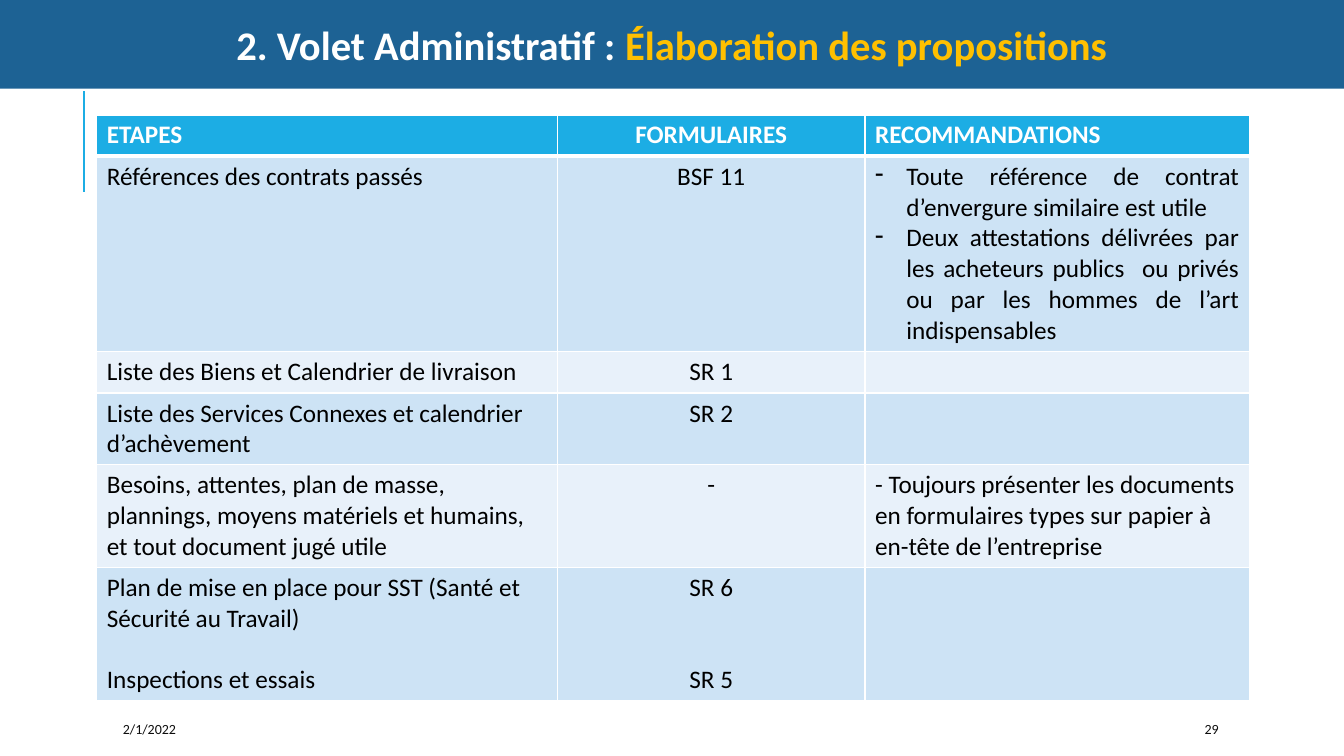
from lxml import etree
from pptx import Presentation
from pptx import util as u
from pptx.dml.color import RGBColor
from pptx.enum import shapes, text
from pptx.oxml import ns

WHITE, BLACK, GOLD = "FFFFFF", "000000", "FFC000"
NAVY, CYAN, FOOTER_INK = "1D6294", "1CADE4", "0D0D0D"
BANDS = ["CDE3F5", "E8F1FA"]
LEFT, CENTER, JUSTIFY = text.PP_ALIGN.LEFT, text.PP_ALIGN.CENTER, text.PP_ALIGN.JUSTIFY

COLUMN_WIDTHS = [4.57, 3.05, 3.81]
ROW_HEIGHTS = [0.41, 1.94, 0.41, 0.71, 1.02, 1.32]
LINE_HEIGHT = 22
HEADINGS = ["ETAPES", "FORMULAIRES", "RECOMMANDATIONS"]
STEPS = [
    (["Références des contrats passés"], ["BSF 11"],
     ["Toute référence de contrat d’envergure similaire est utile",
      "Deux attestations délivrées par les acheteurs publics  ou privés "
      "ou par les hommes de l’art indispensables"]),
    (["Liste des Biens et Calendrier de livraison"], ["SR 1"], []),
    (["Liste des Services Connexes et calendrier d’achèvement"], ["SR 2"], []),
    (["Besoins, attentes, plan de masse, plannings, moyens matériels et humains, "
      "et tout document jugé utile"], ["-"],
     ["- Toujours présenter les documents en formulaires types sur papier à "
      "en-tête de l’entreprise"]),
    (["Plan de mise en place pour SST (Santé et Sécurité au Travail)",
      "Inspections et essais"], ["SR 6", "SR 5"], []),
]


def color(value):
    return RGBColor.from_string(value)


def set_font(font, size, ink, bold=False):
    font.name, font.size, font.bold = "Calibri", u.Pt(size), bold
    font.color.rgb = color(ink)


def add_banner(slide, left, top, width, height):
    banner = slide.shapes.add_shape(
        shapes.MSO_SHAPE.RECTANGLE, *map(u.Inches, (left, top, width, height)))
    banner.shadow.inherit = False
    banner.fill.solid()
    banner.fill.fore_color.rgb = color(NAVY)
    banner.line.fill.background()
    frame = banner.text_frame
    frame.word_wrap = True
    frame.vertical_anchor = text.MSO_ANCHOR.MIDDLE
    title = frame.paragraphs[0]
    title.alignment = CENTER
    for words, ink in (("2. Volet Administratif : ", WHITE),
                       ("Élaboration des propositions", GOLD)):
        part = title.add_run()
        part.text = words
        set_font(part.font, 29, ink, True)


def add_accent(slide, left, top, height):
    accent = slide.shapes.add_connector(
        shapes.MSO_CONNECTOR.STRAIGHT,
        *map(u.Inches, (left, top + height, left, top)))
    accent.line.color.rgb = color(CYAN)
    accent.line.width = u.Pt(1.5)
    etree.SubElement(accent._element.spPr, ns.qn("a:effectLst"))


def add_footer(slide, words, left, top, width, height):
    box = slide.shapes.add_textbox(*map(u.Inches, (left, top, width, height)))
    frame = box.text_frame
    frame.word_wrap = True
    frame.vertical_anchor = text.MSO_ANCHOR.MIDDLE
    frame.text = words
    set_font(frame.paragraphs[0].font, 10, FOOTER_INK)


def add_borders(cell, top, bottom):
    properties = cell._tc.get_or_add_tcPr()
    for side, points in (("L", 1), ("R", 1), ("T", top), ("B", bottom)):
        edge = etree.SubElement(properties, ns.qn(f"a:ln{side}"), w=str(u.Pt(points)))
        fill = etree.SubElement(edge, ns.qn("a:solidFill"))
        etree.SubElement(fill, ns.qn("a:srgbClr"), val=WHITE)


def add_dash(paragraph):
    properties = paragraph._p.get_or_add_pPr()
    indent = u.Inches(0.31)
    properties.set("marL", str(indent))
    properties.set("indent", str(-indent))
    etree.SubElement(properties, ns.qn("a:buChar"), char="-")


def fill_cell(cell, lines, fill, ink, bold, alignment, gap):
    cell.fill.solid()
    cell.fill.fore_color.rgb = color(fill)
    frame = cell.text_frame
    frame.text = "\n".join(lines)
    for index, paragraph in enumerate(frame.paragraphs):
        paragraph.alignment = alignment
        set_font(paragraph.font, 18, ink, bold)
        if index and gap:
            paragraph.space_before = u.Pt(gap)
        if alignment == JUSTIFY:
            add_dash(paragraph)


def add_steps_table(slide, left, top):
    rows = [[[heading] for heading in HEADINGS], *STEPS]
    table = slide.shapes.add_table(
        len(rows), len(HEADINGS), u.Inches(left), u.Inches(top),
        u.Inches(sum(COLUMN_WIDTHS)), u.Inches(sum(ROW_HEIGHTS))).table
    for column, width in zip(table.columns, COLUMN_WIDTHS):
        column.width = u.Inches(width)
    for r, (row, height) in enumerate(zip(rows, ROW_HEIGHTS)):
        table.rows[r].height = u.Inches(height)
        header = r == 0
        fill, ink = (CYAN, WHITE) if header else (BANDS[(r - 1) % 2], BLACK)
        for c, lines in enumerate(row):
            cell = table.cell(r, c)
            add_borders(cell, 3 if r == 1 else 1, 3 if header else 1)
            bulleted = c == 2 and len(lines) > 1
            alignment = JUSTIFY if bulleted else CENTER if c == 1 else LEFT
            gap = (LINE_HEIGHT, 2 * LINE_HEIGHT, 0)[c]
            fill_cell(cell, lines, fill, ink, header, alignment, gap)


def main():
    deck = Presentation()
    deck.slide_width, deck.slide_height = u.Inches(13.33), u.Inches(7.5)
    slide = deck.slides.add_slide(deck.slide_layouts[6])
    add_accent(slide, 0.83, 0.9, 1)
    add_footer(slide, "2/1/2022", 1.12, 7.08, 2.36, 0.3)
    add_footer(slide, "29", 11.85, 7.08, 1.06, 0.3)
    add_banner(slide, 0, 0, 13.33, 0.88)
    add_steps_table(slide, 0.96, 1.14)
    deck.save("out.pptx")


if __name__ == "__main__":
    main()
